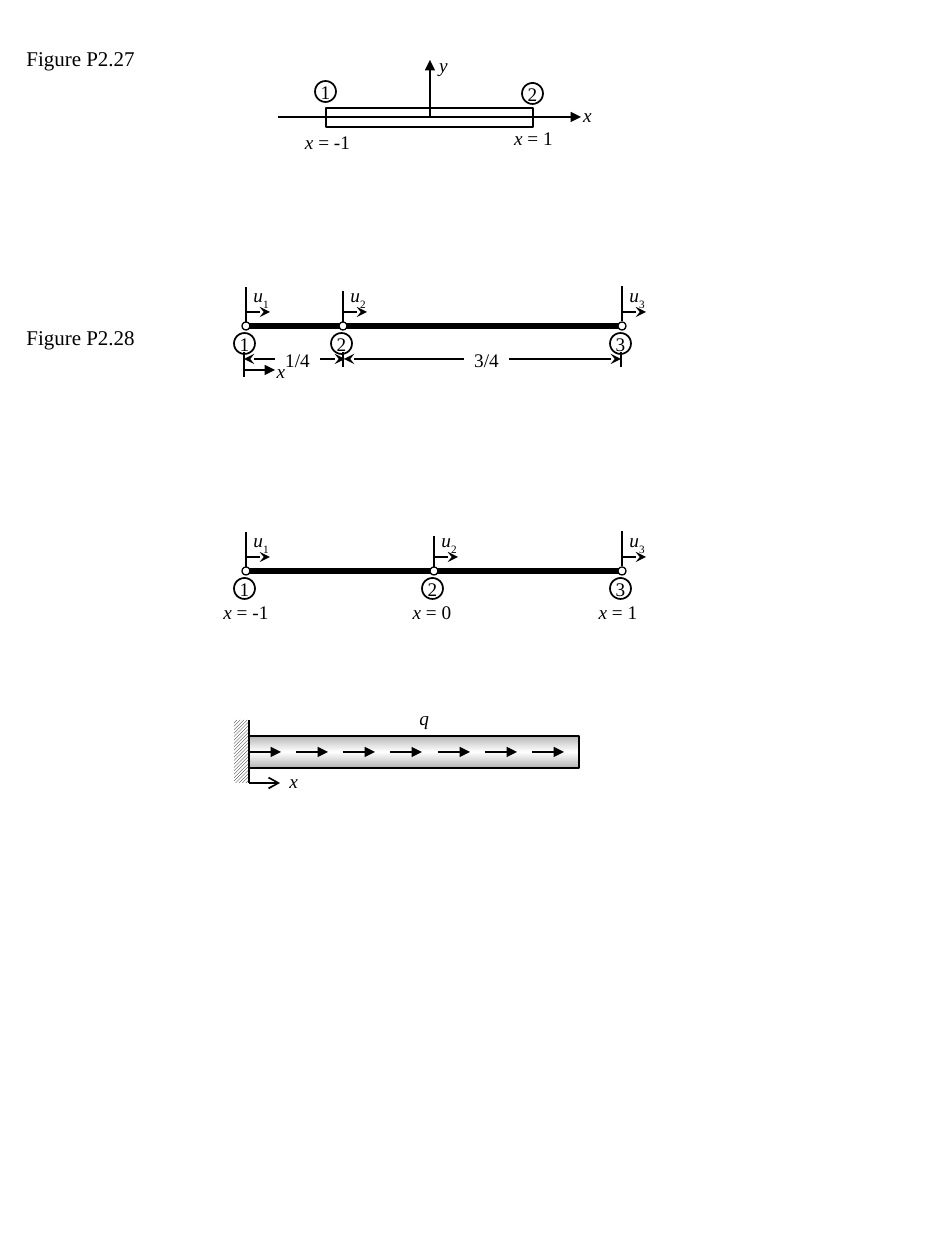
import pptx
import pptx.util
import pptx.dml.color
import pptx.enum.dml
import pptx.enum.shapes
import pptx.enum.text
import pptx.oxml
import pptx.oxml.ns
from lxml import etree

COLORS = {"ink": "000000", "paper": "FFFFFF", "steel": "B6B6B6"}
FONT = "Times New Roman"
PIXELS_PER_INCH = 126
SHAPE = pptx.enum.shapes.MSO_SHAPE
ANCHOR = pptx.enum.text.MSO_ANCHOR
ALIGN = pptx.enum.text.PP_ALIGN
qn = pptx.oxml.ns.qn


def px(length):
    return pptx.util.Emu(round(length * 914400 / PIXELS_PER_INCH))


def rgb(name):
    return pptx.dml.color.RGBColor.from_string(COLORS[name])


def add_line(shapes, start, end, width=0.75, head=None, tail=None):
    connector = shapes.add_connector(
        pptx.enum.shapes.MSO_CONNECTOR.STRAIGHT, *map(px, start + end))
    connector.line.width = pptx.util.Pt(width)
    connector.line.color.rgb = rgb("ink")
    properties = connector._element.spPr
    outline = properties.find(qn("a:ln"))
    for tag, kind in (("a:headEnd", head), ("a:tailEnd", tail)):
        if kind:
            etree.SubElement(outline, qn(tag), type=kind)
    etree.SubElement(properties, qn("a:effectLst"))
    return connector


def write(shape, runs, size=11, align=ALIGN.CENTER, wrap=True, inset=True, anchor=ANCHOR.TOP):
    frame = shape.text_frame
    frame.word_wrap = wrap
    frame.vertical_anchor = anchor
    if not inset:
        frame.margin_left = frame.margin_right = 0
        frame.margin_top = frame.margin_bottom = 0
    paragraph = frame.paragraphs[0]
    paragraph.alignment = align
    paragraph.font.size = pptx.util.Pt(size)
    paragraph.font.name = FONT
    paragraph.font.color.rgb = rgb("ink")
    for text, style in runs:
        run = paragraph.add_run()
        run.text = text
        if style == "italic":
            run.font.italic = True
        elif style == "subscript":
            run.font._element.set("baseline", "-30000")


def add_label(shapes, box, runs, wrap=True):
    label = shapes.add_textbox(*map(px, box))
    write(label, runs, wrap=wrap, inset=False)


def add_shape(shapes, kind, box, fill=None, width=None):
    shape = shapes.add_shape(kind, *map(px, box))
    shape.shadow.inherit = False
    if fill:
        shape.fill.solid()
        shape.fill.fore_color.rgb = rgb(fill)
    else:
        shape.fill.background()
    if width:
        shape.line.width = pptx.util.Pt(width)
        shape.line.color.rgb = rgb("ink")
    else:
        shape.line.fill.background()
    return shape


def add_badge(shapes, left, top, number):
    badge = add_shape(shapes, SHAPE.OVAL, (left, top, 21, 21), width=1)
    write(badge, [(str(number), None)], wrap=False, inset=False, anchor=ANCHOR.MIDDLE)


def add_caption(shapes, left, top, text):
    caption = shapes.add_textbox(px(left), px(top), px(135), px(38))
    write(caption, [(text, None)], size=12, align=ALIGN.LEFT, wrap=False)
    caption.text_frame.auto_size = pptx.enum.text.MSO_AUTO_SIZE.SHAPE_TO_FIT_TEXT


def draw_two_node_element(shapes, left, top):
    add_badge(shapes, left + 37, top + 28, 1)
    add_badge(shapes, left + 244, top + 30, 2)
    add_line(shapes, (left, top + 64), (left + 303, top + 64), 1, tail="triangle")
    add_line(shapes, (left + 152, top + 64), (left + 152, top + 7), 1, tail="triangle")
    add_shape(shapes, SHAPE.RECTANGLE, (left + 48, top + 55, 207, 19), width=1.5)
    for x, y, value in ((23, 77, "= -1"), (229, 73, "= 1")):
        add_label(shapes, (left + x, top + y, 53, 21),
                  [("x ", "italic"), (value, None)], wrap=False)
    for x, y, axis in ((298, 50, "x"), (154, 0, "y")):
        add_label(shapes, (left + x, top + y, 23, 21), [(axis, "italic")], wrap=False)


def draw_three_node_bar(shapes, left, middle, offsets):
    nodes = [left + offset for offset in offsets]
    stem_bottoms = [middle - rise for rise in (4, 0, 5)]
    for x, bottom in zip(nodes, stem_bottoms):
        add_line(shapes, (x, bottom), (x, bottom - 35))
    add_line(shapes, (left, middle), (left + 378, middle), 3)
    for number, x in enumerate(nodes, 1):
        add_shape(shapes, SHAPE.OVAL, (x - 4, middle - 4, 8, 8), "paper", 0.75)
        add_line(shapes, (x, middle - 14), (x + 24, middle - 14), tail="stealth")
        add_label(shapes, (x + 1, middle - 43, 28, 21),
                  [("u", "italic"), (str(number), "subscript")])
        add_badge(shapes, x - 12, middle + 7, number)


def draw_dimensions(shapes, left, middle):
    level = middle + 33
    ticks = (left - 2, left + 97, left + 375)
    for x, drop in zip(ticks, (51, 41, 41)):
        add_line(shapes, (x, middle + 26), (x, middle + drop))
    spans = ((left - 2, left + 99, left + 29, "1/4"),
             (left + 98, left + 375, left + 218, "3/4"))
    for start, end, label_left, text in spans:
        add_line(shapes, (start, level), (end, level), head="stealth", tail="stealth")
        label = add_shape(shapes, SHAPE.RECTANGLE, (label_left, level - 11, 45, 21), "paper")
        write(label, [(text, None)], inset=False)
    add_line(shapes, (left - 2, level + 11), (left + 29, level + 11), tail="triangle")
    add_label(shapes, (left + 21, level, 28, 21), [("x", "italic")])


def draw_coordinates(shapes, left, top):
    for index, value in enumerate((-1, 0, 1)):
        add_label(shapes, (left + index * 186, top, 48, 21),
                  [("x", "italic"), (f" = {value}", None)])


def draw_loaded_rod(shapes, left, top):
    face = left + 15
    rod = add_shape(shapes, SHAPE.RECTANGLE, (face, top + 16, 330, 32), width=1)
    rod.fill.gradient()
    rod.fill.gradient_angle = 270
    stops = rod._element.spPr.find(qn("a:gradFill")).find(qn("a:gsLst"))
    for stop in list(stops):
        stops.remove(stop)
    for position, color in ((0, "steel"), (50, "paper"), (100, "steel")):
        stop = etree.SubElement(stops, qn("a:gs"), pos=str(position * 1000))
        etree.SubElement(stop, qn("a:srgbClr"), val=COLORS[color])
    wall = add_shape(shapes, SHAPE.RECTANGLE, (left, top, 15, 63))
    wall.fill.patterned()
    wall.fill.pattern = pptx.enum.dml.MSO_PATTERN.DARK_UPWARD_DIAGONAL
    wall.fill.fore_color.rgb = rgb("ink")
    wall.fill.back_color.rgb = rgb("paper")
    add_line(shapes, (face, top), (face, top + 63), 1)
    for index in range(7):
        x = face + index * 189 // 4
        arrow = add_line(shapes, (x, top + 32), (x + 32, top + 32), 1, tail="triangle")
        if index == 0:
            arrow.begin_connect(rod, 1)
    add_line(shapes, (face, top + 63), (face + 31, top + 63), 1, tail="arrow")
    for x, y, symbol in ((173, -20, "q"), (43, 43, "x")):
        label = shapes.add_textbox(px(left + x), px(top + y), px(44), px(39))
        write(label, [(symbol, "italic")], align=ALIGN.LEFT)


def main():
    presentation = pptx.Presentation()
    presentation.slide_width = px(945)
    presentation.slide_height = px(1260)
    slide = presentation.slides.add_slide(presentation.slide_layouts[6])
    shapes = slide.shapes
    add_caption(shapes, 14, 39, "Figure P2.27")
    add_caption(shapes, 14, 318, "Figure P2.28")
    dimensioned_bar = shapes.add_group_shape().shapes
    draw_three_node_bar(dimensioned_bar, 246, 326, (0, 97, 376))
    draw_dimensions(dimensioned_bar, 246, 326)
    draw_two_node_element(shapes.add_group_shape().shapes, 278, 53)
    draw_three_node_bar(shapes, 246, 571, (0, 188, 376))
    draw_coordinates(shapes, 222, 600)
    draw_loaded_rod(shapes, 234, 720)
    presentation.save("out.pptx")


if __name__ == "__main__":
    main()
